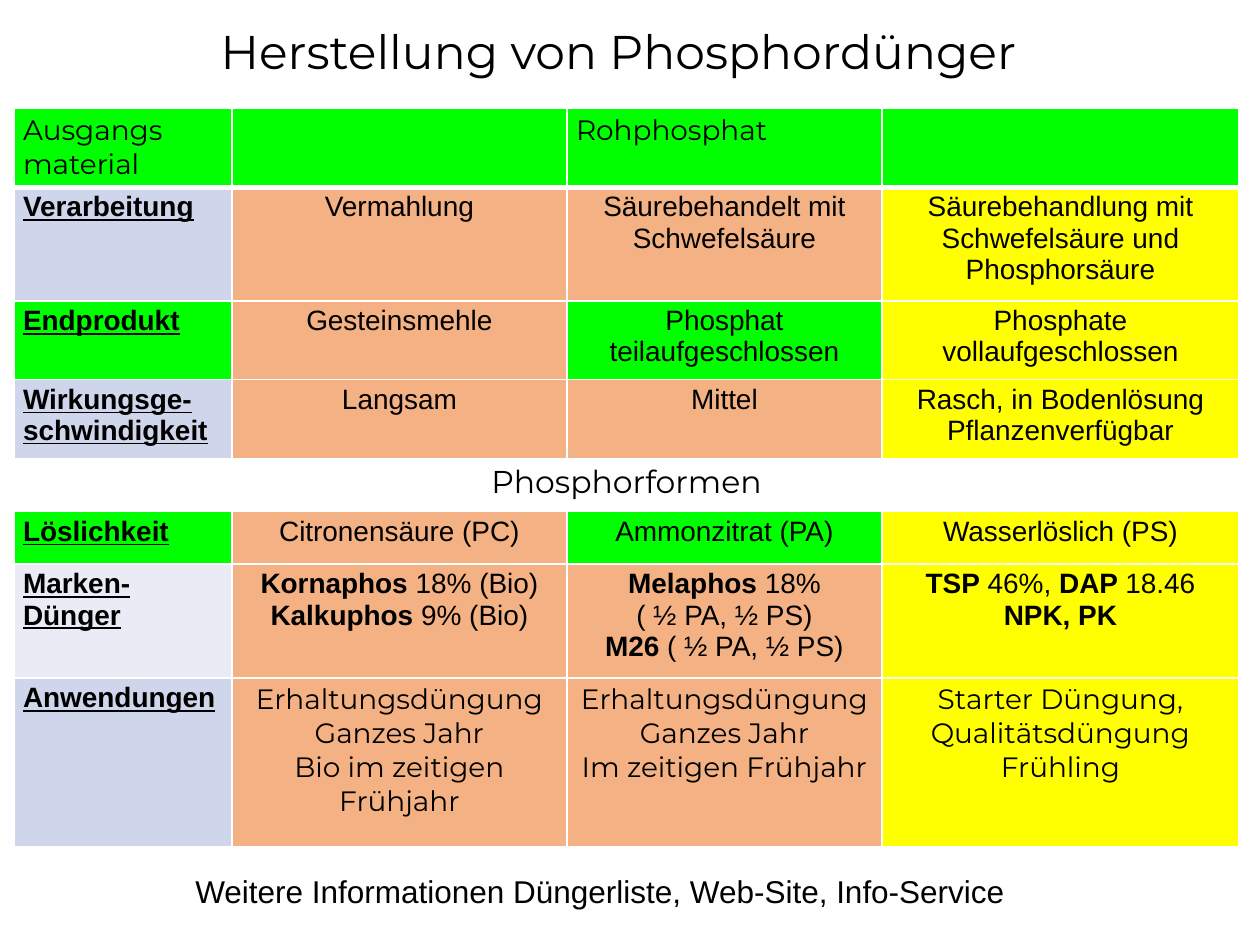
from lxml import etree
from pptx import Presentation
from pptx.dml.color import RGBColor
from pptx.enum.text import MSO_ANCHOR, PP_ALIGN
from pptx.oxml.ns import qn
from pptx.util import Pt

LEFT, MID = PP_ALIGN.LEFT, PP_ALIGN.CENTER
TOP, BASE = MSO_ANCHOR.TOP, MSO_ANCHOR.BOTTOM
SANS, HEAD = "Arial", "Montserrat"
BLACK, WHITE = "000000", "FFFFFF"
GREEN, YELLOW, PEACH = "00FF00", "FFFF00", "F4B183"
BLUE, PALE = "CFD5EA", "E9EBF5"

COLS = [124.5, 191.5, 180, 204]
ROWS = [45, 65, 45, 45, 30.5, 30, 65, 96.5]
SECTION = 4

# Line ends part paragraphs, "|" is a line break, "*" switches bold.
TEXTS = [
    ["Ausgangs|material", "", "Rohphosphat", ""],
    ["Verarbeitung", "Vermahlung", "Säurebehandelt mit Schwefelsäure",
     "Säurebehandlung mit Schwefelsäure und Phosphorsäure"],
    ["Endprodukt", "Gesteinsmehle", "Phosphat teilaufgeschlossen",
     "Phosphate vollaufgeschlossen"],
    ["Wirkungsge-|schwindigkeit", "Langsam", "Mittel",
     "Rasch, in Bodenlösung Pflanzenverfügbar"],
    ["Phosphorformen"],
    ["Löslichkeit", "Citronensäure (PC)", "Ammonzitrat (PA)",
     "Wasserlöslich (PS)"],
    ["Marken-|Dünger", "*Kornaphos* 18% (Bio)\n*Kalkuphos* 9% (Bio)",
     "*Melaphos* 18%|( ½ PA, ½ PS)\n*M26* ( ½ PA, ½ PS)",
     "*TSP* 46%,* DAP *18.46 *NPK, PK*"],
    ["Anwendungen",
     "Erhaltungsdüngung\nGanzes Jahr\nBio im zeitigen Frühjahr",
     "Erhaltungsdüngung\nGanzes Jahr\nIm zeitigen Frühjahr",
     "Starter Düngung, Qualitätsdüngung\nFrühling"],
]
FILLS = [
    [GREEN] * 4,
    [BLUE, PEACH, PEACH, YELLOW],
    [GREEN, PEACH, GREEN, YELLOW],
    [BLUE, PEACH, PEACH, YELLOW],
    [None],
    [GREEN, PEACH, GREEN, YELLOW],
    [PALE, PEACH, PEACH, YELLOW],
    [BLUE, PEACH, PEACH, YELLOW],
]


def color(code):
    return RGBColor.from_string(code)


class Deck:
    def __init__(self, wide, high):
        self.prs = Presentation()
        self.prs.slide_width, self.prs.slide_height = Pt(wide), Pt(high)
        self.slide = self.prs.slides.add_slide(self.prs.slide_layouts[6])

    def put(self, frame, text, size, font=SANS, align=LEFT, label=False):
        """Fill a text frame; a label is bold and underlined."""
        for i, line in enumerate(text.split("\n")):
            par = frame.add_paragraph() if i else frame.paragraphs[0]
            par.alignment = align
            for j, part in enumerate(line.split("*")):
                for k, piece in enumerate(part.split("|")):
                    if k:
                        par.add_line_break()
                    if not piece:
                        continue
                    run = par.add_run()
                    run.text = piece
                    run.font.size, run.font.name = Pt(size), font
                    run.font.bold = label or j % 2 == 1
                    run.font.underline = label
                    run.font.color.rgb = color(BLACK)

    def text(self, box, text, size, font=SANS, align=LEFT, anchor=TOP):
        frame = self.slide.shapes.add_textbox(*map(Pt, box)).text_frame
        frame.word_wrap, frame.vertical_anchor = True, anchor
        self.put(frame, text, size, font, align)
        return frame

    def edge(self, cell, bottom=1):
        """Draw white borders, which must come before the fill."""
        props = cell._tc.get_or_add_tcPr()
        for tag, width in (("lnL", 1), ("lnR", 1), ("lnT", 1), ("lnB", bottom)):
            line = etree.SubElement(props, qn("a:" + tag), w=str(Pt(width)))
            fill = etree.SubElement(line, qn("a:solidFill"))
            etree.SubElement(fill, qn("a:srgbClr"), val=WHITE)

    def table(self, left, top):
        grid = self.slide.shapes.add_table(
            len(ROWS), len(COLS), Pt(left), Pt(top),
            Pt(sum(COLS)), Pt(sum(ROWS))).table
        grid.first_row = grid.horz_banding = False
        for col, width in zip(grid.columns, COLS):
            col.width = Pt(width)
        for row, height in zip(grid.rows, ROWS):
            row.height = Pt(height)
        grid.cell(SECTION, 0).merge(grid.cell(SECTION, len(COLS) - 1))
        for r, (texts, fills) in enumerate(zip(TEXTS, FILLS)):
            for c, (text, fill) in enumerate(zip(texts, fills)):
                self.cell(grid.cell(r, c), r, c, text, fill)

    def cell(self, cell, r, c, text, fill):
        cell.margin_left = cell.margin_right = Pt(5.2)
        cell.margin_top = cell.margin_bottom = Pt(2.6)
        self.edge(cell, 1 if r else 3)
        if fill:
            cell.fill.solid()
            cell.fill.fore_color.rgb = color(fill)
        else:
            cell.fill.background()
        label = c == 0 and r not in (0, SECTION)
        last = r == len(ROWS) - 1
        font = HEAD if not label and (r in (0, SECTION) or last) else SANS
        align = LEFT if r == 0 or label else MID
        size = 18 if r == SECTION else 16
        self.put(cell.text_frame, text, size, font, align, label)


def main():
    deck = Deck(720, 540)
    title = deck.text((85.5, 5, 535.5, 43), "Herstellung von Phosphordünger",
                      27, HEAD, MID, BASE)
    title.margin_left = title.margin_right = Pt(5.2)
    title.margin_top = title.margin_bottom = Pt(2.6)
    title.paragraphs[0].line_spacing = 0.9
    deck.table(8, 62)
    deck.text((104.5, 494.5, 503, 29),
              "Weitere Informationen Düngerliste, Web-Site, Info-Service", 18)
    deck.prs.save("out.pptx")


if __name__ == "__main__":
    main()
